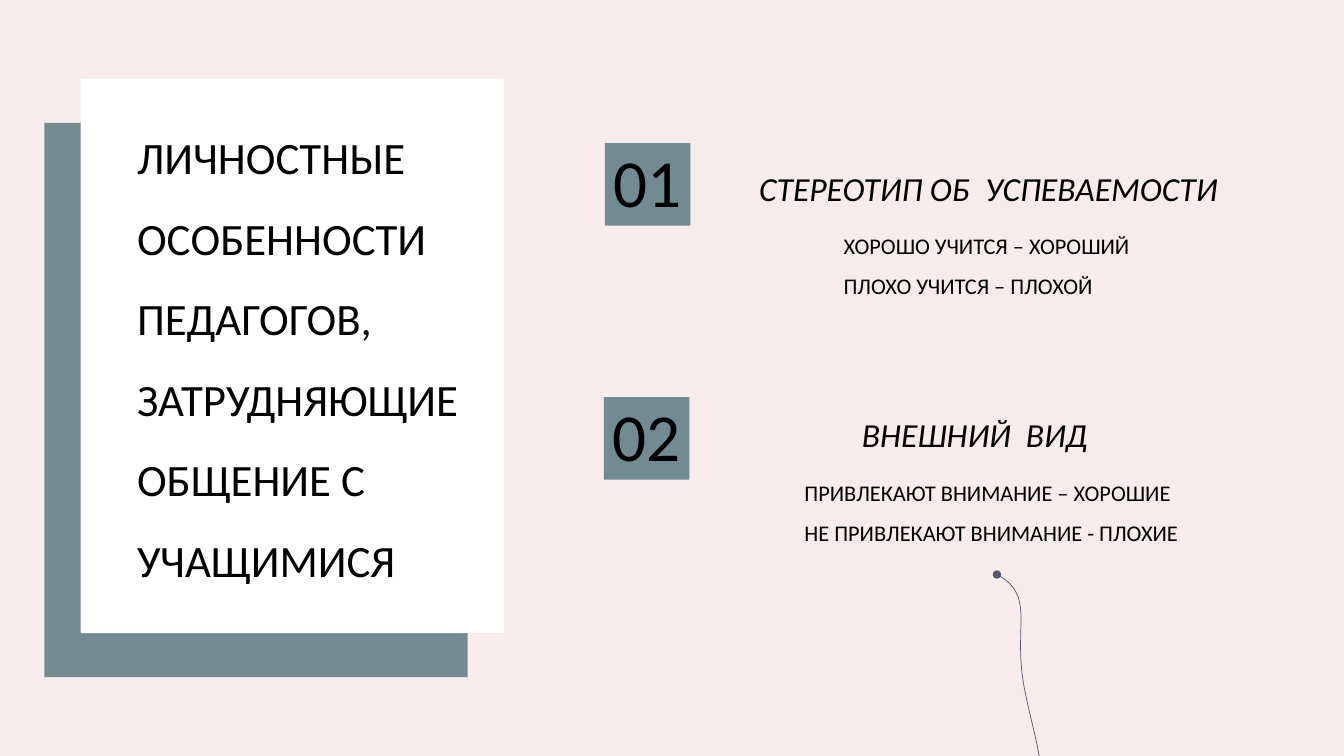
from lxml.etree import SubElement
from pptx import Presentation
from pptx.dml.color import RGBColor
from pptx.enum.shapes import MSO_SHAPE
from pptx.enum.text import MSO_ANCHOR, MSO_AUTO_SIZE, PP_ALIGN
from pptx.oxml.ns import qn
from pptx.util import Pt

COLORS = {"background": "F7EBEB", "teal": "728B93", "card": "FFFFFF",
          "text": "000000", "stem": "545871"}
FONT = "Calibri"

SECTIONS = [
    {"number": "01", "box": (432, 102.2), "heading": "СТЕРЕОТИП ОБ  УСПЕВАЕМОСТИ",
     "heading_box": (103, 14.4, 378.7, 36),
     "lines": "ХОРОШО УЧИТСЯ – ХОРОШИЙ\nПЛОХО УЧИТСЯ – ПЛОХОЙ",
     "lines_box": (163.4, 50.4, 239, 62.6)},
    {"number": "02", "box": (431.3, 283.7), "heading": "ВНЕШНИЙ  ВИД",
     "heading_box": (177.1, 8.6, 248.4, 36),
     "lines": "ПРИВЛЕКАЮТ ВНИМАНИЕ – ХОРОШИЕ\nНЕ ПРИВЛЕКАЮТ ВНИМАНИЕ - ПЛОХИЕ",
     "lines_box": (136.1, 45.3, 329, 91.4)},
]


def color(name):
    return RGBColor.from_string(COLORS[name])


def write(shape, text, size, spacing=1.0, italic=False, align=PP_ALIGN.LEFT,
          anchor=MSO_ANCHOR.TOP):
    frame = shape.text_frame
    frame.word_wrap = True
    frame.auto_size = MSO_AUTO_SIZE.NONE
    frame.vertical_anchor = anchor
    frame.text = text
    for para in frame.paragraphs:
        properties = para._p.get_or_add_pPr()
        properties.set("marL", "0")
        properties.set("indent", "0")
        SubElement(properties, qn("a:buNone"))
        para.alignment = align
        para.line_spacing = spacing
        para.space_before = Pt(0)
        for span in para.runs:
            span.font.name = FONT
            span.font.size = Pt(size)
            span.font.bold = False
            span.font.italic = italic
            span.font.color.rgb = color("text")


def place(page, placeholder, left, top, width, height):
    placeholder.left, placeholder.top = Pt(left), Pt(top)
    placeholder.width, placeholder.height = Pt(width), Pt(height)
    page.shapes._spTree.append(placeholder._element)


def add_block(page, left, top, width, height, fill):
    block = page.shapes.add_shape(MSO_SHAPE.RECTANGLE, Pt(left), Pt(top), Pt(width), Pt(height))
    block.shadow.inherit = False
    block.fill.solid()
    block.fill.fore_color.rgb = color(fill)
    block.line.fill.background()
    return block


def add_title_card(page, left, top, width, height):
    add_block(page, left - 25.9, top + 31.6, width, height, "teal")
    add_block(page, left, top, width, height, "card")
    title = page.shapes.title
    place(page, title, left + 33.1, top + 13.6, 354.2, 350)
    write(title, "ЛИЧНОСТНЫЕ ОСОБЕННОСТИ ПЕДАГОГОВ, ЗАТРУДНЯЮЩИЕ ОБЩЕНИЕ С УЧАЩИМИСЯ",
          size=32, spacing=1.5)


def add_section(page, section, heading, body):
    left, top = section["box"]
    badge = add_block(page, left, top, 61.2, 59, "teal")
    frame = badge.text_frame
    frame.margin_left = frame.margin_right = frame.margin_top = 0
    frame.margin_bottom = Pt(6)
    write(badge, section["number"], size=48, align=PP_ALIGN.CENTER, anchor=MSO_ANCHOR.MIDDLE)
    for placeholder, part, style in ((heading, "heading", {"size": 24, "italic": True}),
                                     (body, "lines", {"size": 16, "spacing": 1.5})):
        across, down, width, height = section[part + "_box"]
        place(page, placeholder, left + across, top + down, width, height)
        write(placeholder, section[part], **style)


def add_stem(page, left, top):
    offsets = [(30.2, 129.6), (26.6, 109.4), (20.1, 88.6), (18, 70.6),
               (13.7, 34.6), (25.9, 13.7), (0, 0)]
    points = [(Pt(left + across), Pt(top + down)) for across, down in offsets]
    builder = page.shapes.build_freeform(*points[0])
    builder.add_line_segments(points[1:], close=False)
    stem = builder.convert_to_shape()
    stem.shadow.inherit = False
    stem.fill.background()
    stem.line.color.rgb = color("stem")
    stem.line.width = Pt(0.5)
    SubElement(stem.line._get_or_add_ln(), qn("a:tailEnd"), type="oval")
    outline = next(stem._element.iter(qn("a:path")))
    segments = outline.findall(qn("a:lnTo"))
    for start in range(0, len(segments), 3):
        curve = SubElement(outline, qn("a:cubicBezTo"))
        for segment in segments[start:start + 3]:
            curve.append(segment[0])
            outline.remove(segment)


def main():
    deck = Presentation()
    deck.slide_width, deck.slide_height = Pt(960), Pt(540)
    page = deck.slides.add_slide(deck.slide_layouts.get_by_name("Comparison"))
    page.background.fill.solid()
    page.background.fill.fore_color.rgb = color("background")
    holders = {holder.placeholder_format.idx: holder for holder in page.placeholders}
    add_title_card(page, 57.6, 56.2, 302.4, 396)
    for index, section in enumerate(SECTIONS):
        add_section(page, section, holders[2 * index + 1], holders[2 * index + 2])
    add_stem(page, 712.1, 410.4)
    deck.save("out.pptx")


if __name__ == "__main__":
    main()
